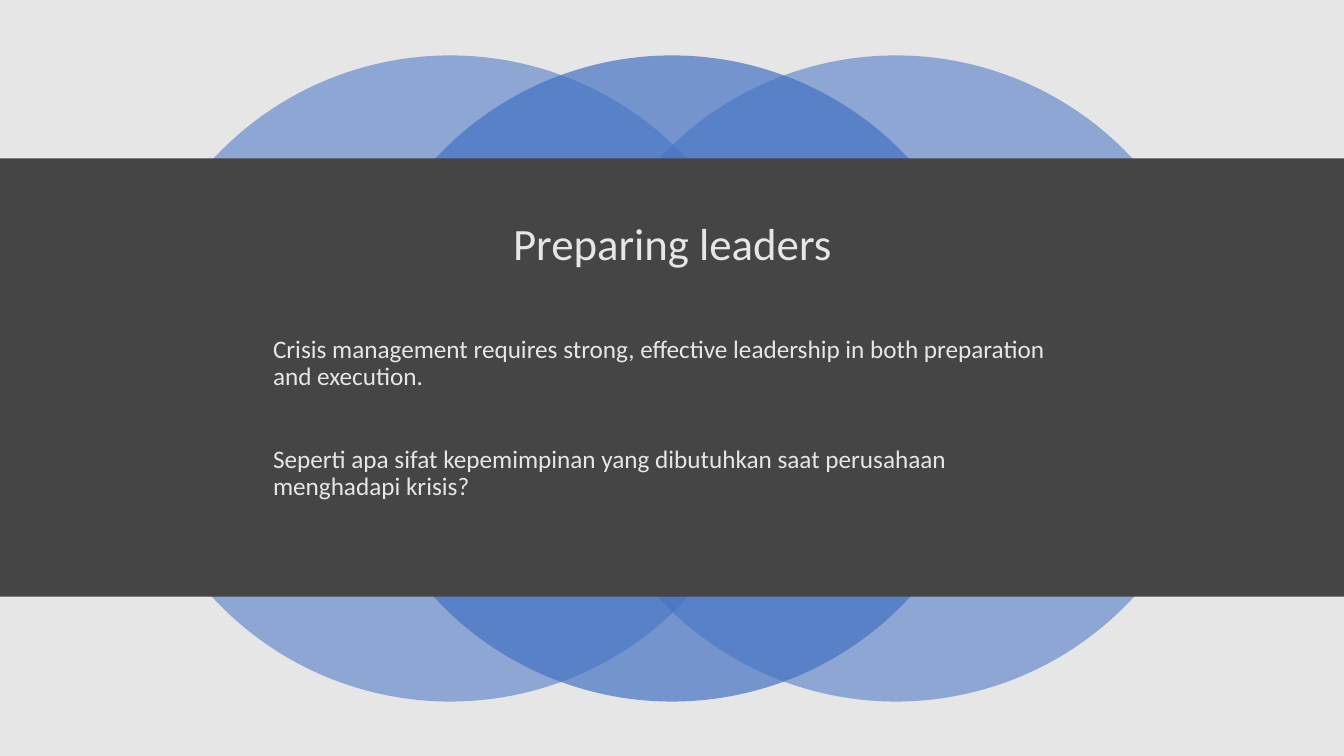
"""Build the "Preparing leaders" slide: a dark text band over three overlapping circles."""
from dataclasses import dataclass

from lxml import etree
from pptx import Presentation
from pptx.dml.color import RGBColor
from pptx.enum.shapes import MSO_SHAPE
from pptx.enum.text import MSO_ANCHOR, PP_ALIGN
from pptx.oxml.ns import qn
from pptx.slide import Slide
from pptx.util import Inches, Pt

RECTANGLE, OVAL = MSO_SHAPE.RECTANGLE, MSO_SHAPE.OVAL
TOP, MIDDLE = MSO_ANCHOR.TOP, MSO_ANCHOR.MIDDLE
LEFT, CENTER = PP_ALIGN.LEFT, PP_ALIGN.CENTER


@dataclass(frozen=True)
class Theme:
    dark: str = "454545"
    light: str = "E7E6E6"
    accent: str = "4472C4"
    font: str = "Calibri"
    title_size: int = 32
    body_size: int = 18
    line_spacing: float = 0.9


@dataclass(frozen=True)
class Box:
    left: float
    top: float
    width: float
    height: float

    def lengths(self) -> list[int]:
        return [Inches(value) for value in (self.left, self.top, self.width, self.height)]


@dataclass(frozen=True)
class Panel:
    box: Box
    color: str
    geometry: MSO_SHAPE = RECTANGLE
    opacity: int = 100


@dataclass(frozen=True)
class TextBlock:
    box: Box
    paragraphs: tuple[str, ...]
    size: int
    alignment: PP_ALIGN = LEFT
    anchor: MSO_ANCHOR = TOP
    gap: float = 0


THEME = Theme()
SLIDE_WIDTH, SLIDE_HEIGHT = 13.33, 7.5
CIRCLE_TOP, CIRCLE_SIZE = 0.55, 6.41

PANELS = (
    Panel(Box(0, 0, SLIDE_WIDTH, SLIDE_HEIGHT), THEME.light),
    *(
        Panel(Box(left, CIRCLE_TOP, CIRCLE_SIZE, CIRCLE_SIZE), THEME.accent, OVAL, opacity)
        for left, opacity in ((1.26, 55), (5.68, 55), (3.46, 70))
    ),
    Panel(Box(0, 1.57, SLIDE_WIDTH, 4.35), THEME.dark),
)

TEXT_BLOCKS = (
    TextBlock(
        Box(0.92, 1.93, 11.5, 1.02),
        ("Preparing leaders",),
        THEME.title_size,
        CENTER,
        MIDDLE,
    ),
    TextBlock(
        Box(2.61, 3.29, 8.12, 2.31),
        (
            "Crisis management requires strong, effective leadership in both preparation and execution.",
            "Seperti apa sifat kepemimpinan yang dibutuhkan saat perusahaan menghadapi krisis?",
        ),
        THEME.body_size,
        gap=39.5,
    ),
)


def add_panel(slide: Slide, panel: Panel) -> None:
    """Draw a filled shape without outline, translucent when its opacity is below 100."""
    shape = slide.shapes.add_shape(panel.geometry, *panel.box.lengths())
    shape.shadow.inherit = False
    shape.line.fill.background()
    shape.fill.solid()
    shape.fill.fore_color.rgb = RGBColor.from_string(panel.color)
    if panel.opacity < 100:
        color = shape.fill._xPr.find(qn("a:solidFill"))[0]
        etree.SubElement(color, qn("a:alpha"), val=str(panel.opacity * 1000))


def add_text(slide: Slide, block: TextBlock) -> None:
    """Write a wrapped text box, separating its paragraphs by the block's gap."""
    frame = slide.shapes.add_textbox(*block.box.lengths()).text_frame
    frame.word_wrap = True
    frame.vertical_anchor = block.anchor
    for index, text in enumerate(block.paragraphs):
        paragraph = frame.add_paragraph() if index else frame.paragraphs[0]
        paragraph.alignment = block.alignment
        paragraph.line_spacing = THEME.line_spacing
        paragraph.space_before = Pt(block.gap if index else 0)
        run = paragraph.add_run()
        run.text = text
        run.font.name = THEME.font
        run.font.size = Pt(block.size)
        run.font.color.rgb = RGBColor.from_string(THEME.light)


def main() -> None:
    """Assemble the slide and save it."""
    presentation = Presentation()
    presentation.slide_width = Inches(SLIDE_WIDTH)
    presentation.slide_height = Inches(SLIDE_HEIGHT)
    slide = presentation.slides.add_slide(presentation.slide_layouts[6])
    slide.background.fill.solid()
    slide.background.fill.fore_color.rgb = RGBColor.from_string(THEME.dark)
    for panel in PANELS:
        add_panel(slide, panel)
    for block in TEXT_BLOCKS:
        add_text(slide, block)
    presentation.save("out.pptx")


if __name__ == "__main__":
    main()
